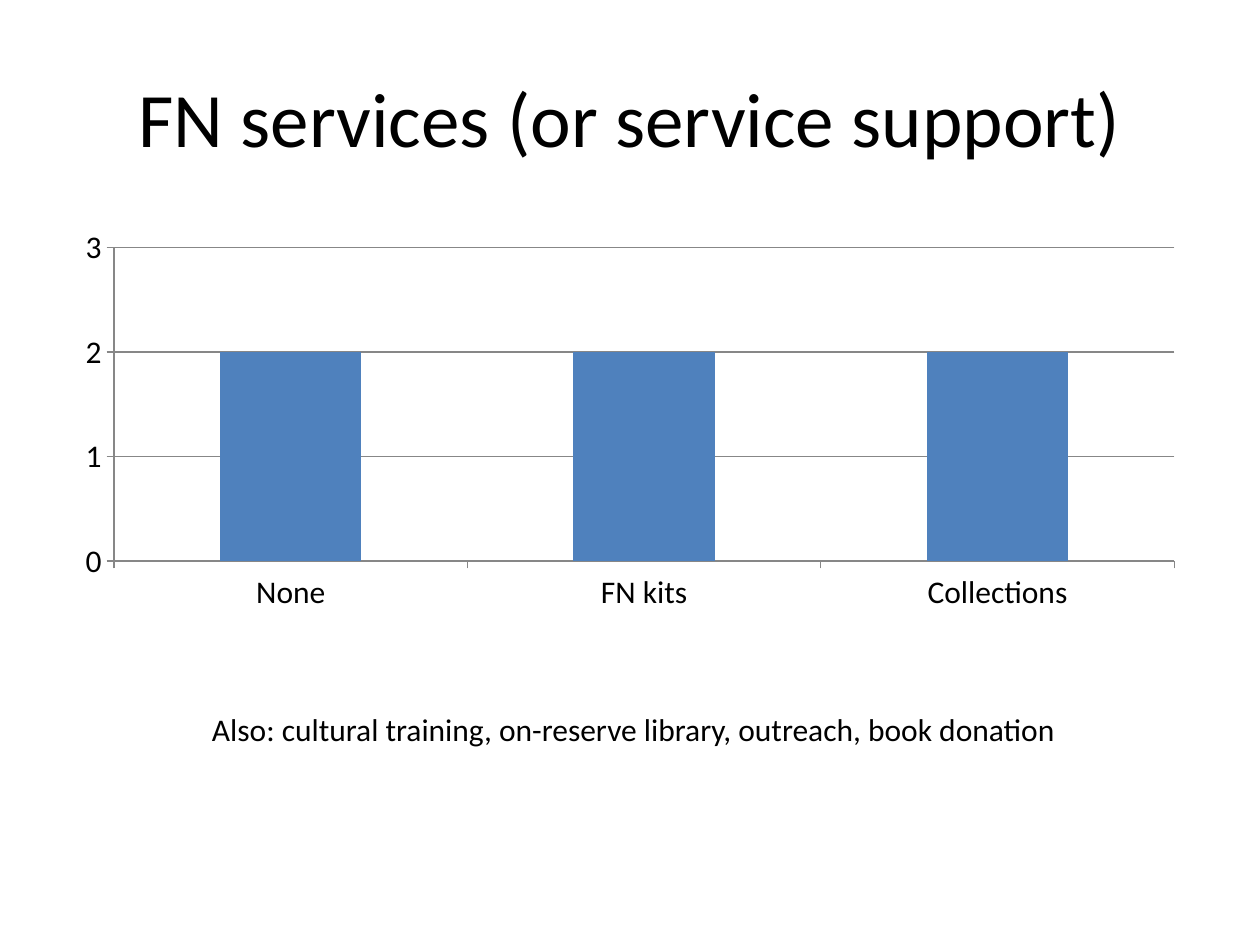
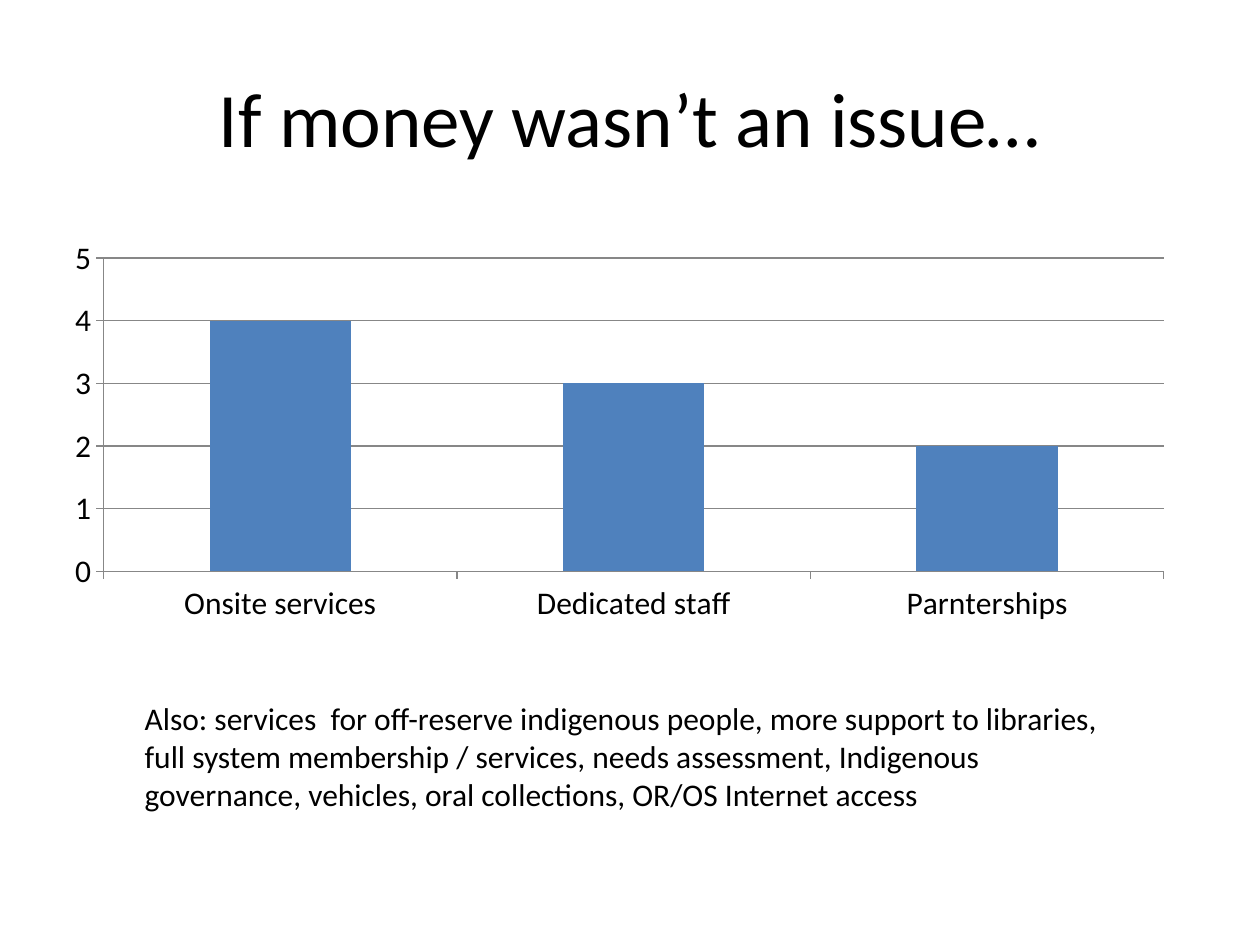
import pptx
import pptx.chart.data
import pptx.dml.color
import pptx.enum.chart
import pptx.enum.text
import pptx.util

BLACK = pptx.dml.color.RGBColor(0x00, 0x00, 0x00)
WHITE = pptx.dml.color.RGBColor(0xFF, 0xFF, 0xFF)
GREY = pptx.dml.color.RGBColor(0x87, 0x87, 0x87)
BLUE = pptx.dml.color.RGBColor(0x4F, 0x81, 0xBD)
FACE = "Calibri"
BODY = 18
CELL = pptx.util.Inches(1) // 12
WIDE, HIGH = 120, 90


def place(*cells):
    """Turn grid cells into slide lengths."""
    return [pptx.util.Emu(round(cell * CELL)) for cell in cells]


def style(font, size):
    """Give a font the shared face and colour."""
    font.name = FACE
    font.size = pptx.util.Pt(size)
    font.color.rgb = BLACK


def add_text(slide, text, box, size=BODY):
    """Add one wrapped paragraph and return its frame."""
    frame = slide.shapes.add_textbox(*place(*box)).text_frame
    frame.word_wrap = True
    para = frame.paragraphs[0]
    para.text = text
    style(para.font, size)
    return frame


def add_title(slide, text):
    """Add the centred slide title."""
    frame = add_text(slide, text, (6, 3.6, 108, 15), 44)
    frame.vertical_anchor = pptx.enum.text.MSO_ANCHOR.MIDDLE
    frame.paragraphs[0].alignment = pptx.enum.text.PP_ALIGN.CENTER


def draw_line(line):
    """Colour an axis or grid line."""
    line.color.rgb = GREY
    line.width = pptx.util.Pt(0.75)


def add_bars(slide, counts, left, top):
    """Add a column chart of answer counts."""
    data = pptx.chart.data.CategoryChartData(number_format="General")
    data.categories = list(counts)
    data.add_series("Series 1", list(counts.values()))
    kind = pptx.enum.chart.XL_CHART_TYPE.COLUMN_CLUSTERED
    box = place(left, top, 108, 38)
    chart = slide.shapes.add_chart(kind, *box, data).chart
    chart.has_legend = False
    chart.has_title = False
    style(chart.font, BODY)
    plot = chart.plots[0]
    plot.gap_width = 150
    plot.vary_by_categories = False
    fill = plot.series[0].format.fill
    fill.solid()
    fill.fore_color.rgb = BLUE
    for axis in (chart.category_axis, chart.value_axis):
        axis.major_tick_mark = pptx.enum.chart.XL_TICK_MARK.OUTSIDE
        axis.minor_tick_mark = pptx.enum.chart.XL_TICK_MARK.NONE
        draw_line(axis.format.line)
    axis = chart.value_axis
    axis.minimum_scale = 0
    axis.maximum_scale = max(counts.values()) + 1
    axis.major_unit = 1
    axis.has_major_gridlines = True
    draw_line(axis.major_gridlines.format.line)


def add_page(deck, title, counts, start, note, box):
    """Add a slide with a title, a chart and a note."""
    slide = deck.slides.add_slide(deck.slide_layouts[6])
    fill = slide.background.fill
    fill.solid()
    fill.fore_color.rgb = WHITE
    add_title(slide, title)
    add_bars(slide, counts, *start)
    add_text(slide, note, box)


def main():
    """Build and save the deck."""
    deck = pptx.Presentation()
    deck.slide_width, deck.slide_height = place(WIDE, HIGH)
    add_page(
        deck,
        "FN services (or service support)",
        {"None": 2, "FN kits": 2, "Collections": 2},
        (6, 21),
        "Also: cultural training, on-reserve library, outreach, book donation",
        (19, 67, 86, 4.8),
    )
    add_page(
        deck,
        "If money wasn’t an issue…",
        {"Onsite services": 4, "Dedicated staff": 3, "Parnterships": 2},
        (5, 22),
        "Also: services  for off-reserve indigenous people, more support to "
        "libraries, full system membership / services, needs assessment, "
        "Indigenous governance, vehicles, oral collections, "
        "OR/OS Internet access",
        (12.6, 66, 97, 12.1),
    )
    deck.save("out.pptx")


if __name__ == "__main__":
    main()
